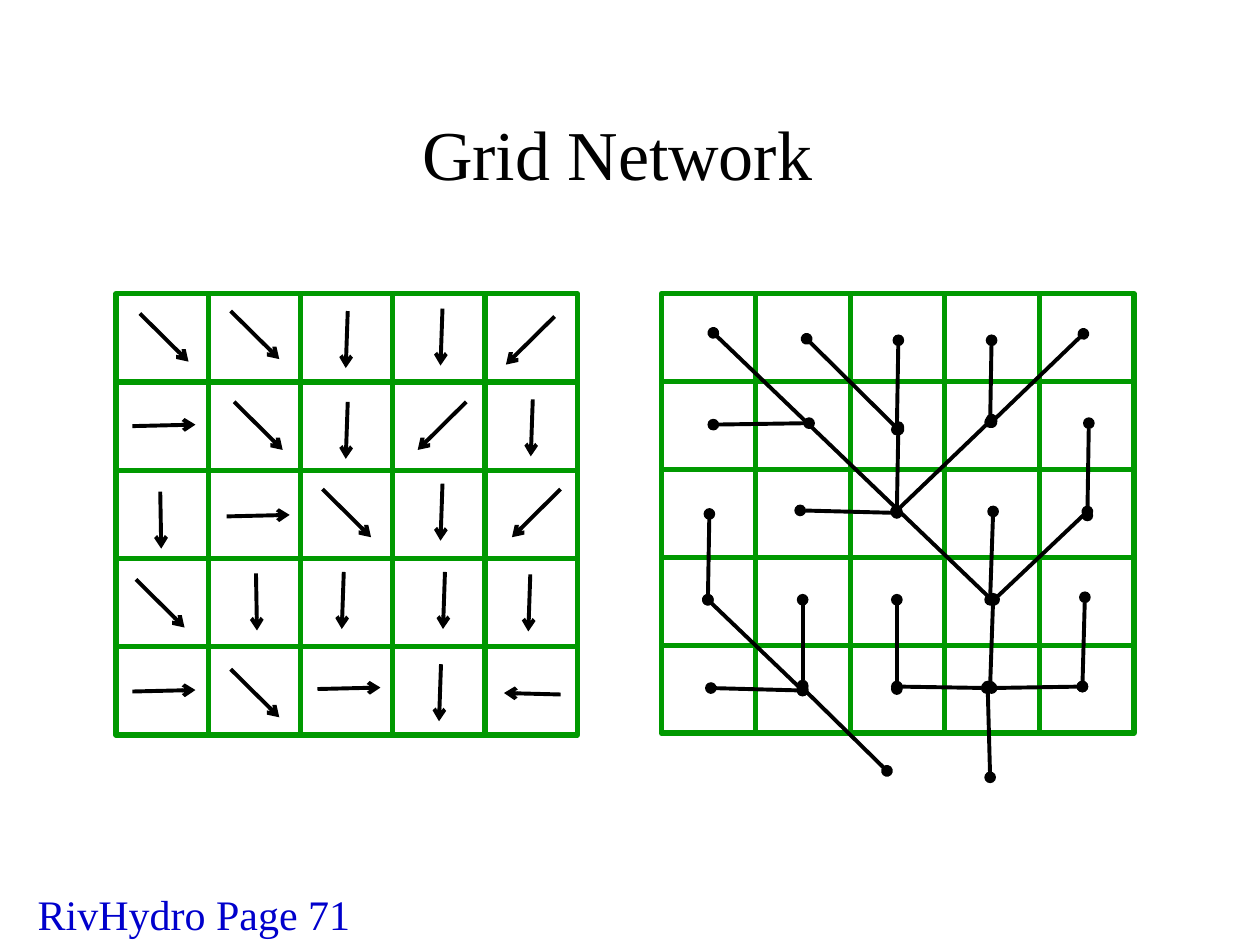
from pptx import Presentation
from pptx.dml.color import RGBColor
from pptx.enum.shapes import MSO_CONNECTOR, MSO_SHAPE
from pptx.enum.text import MSO_AUTO_SIZE
from pptx.oxml.ns import qn
from pptx.util import Cm, Pt
from lxml.etree import SubElement


def color(value):
    return RGBColor.from_string(value)


def add_line(group, start, end, ends):
    """Draw a black line; ends maps headEnd / tailEnd to an arrowhead type."""
    points = [Cm(value) for value in (*start, *end)]
    line = group.shapes.add_connector(MSO_CONNECTOR.STRAIGHT, *points)
    line.line.width = Pt(2.25)
    line.line.color.rgb = color("000000")
    for tag, kind in ends.items():
        SubElement(line.line._get_or_add_ln(), qn(f"a:{tag}"), type=kind)
    SubElement(line._element.spPr, qn("a:effectLst"))


deck = Presentation()
deck.slide_width, deck.slide_height = Cm(25.4), Cm(19.05)
page = deck.slides.add_slide(deck.slide_layouts[6])

# Two grids of 5 by 5 cells: left, top, width, height
count = 5
network_group = page.shapes.add_group_shape()
direction_group = page.shapes.add_group_shape()
grids = [
    (network_group, 13.33, 5.92, 9.53, 8.86),
    (direction_group, 2.34, 5.92, 9.3, 8.9),
]
for group, left, top, width, height in grids:
    cell_width, cell_height = width / count, height / count
    for row in range(count):
        for column in range(count):
            cell = group.shapes.add_shape(
                MSO_SHAPE.RECTANGLE,
                Cm(left + column * cell_width), Cm(top + row * cell_height),
                Cm(cell_width), Cm(cell_height))
            cell.shadow.inherit = False
            cell.fill.background()
            cell.line.color.rgb = color("009900")
            cell.line.width = Pt(3)

# Flow network: each link joins two points
links = [
    ((14.38, 6.71), (19.99, 12.09)),
    ((16.26, 6.83), (18.11, 8.66)),
    ((14.3, 10.36), (14.27, 12.09)),
    ((19.91, 13.84), (19.96, 15.67)),
    ((14.27, 12.09), (16.18, 13.92)),
    ((14.33, 13.87), (16.18, 13.92)),
    ((18.08, 13.84), (19.89, 13.87)),
    ((16.18, 13.87), (17.88, 15.54)),
    ((16.18, 12.09), (16.18, 13.82)),
    ((16.13, 10.29), (18.08, 10.34)),
    ((14.38, 8.56), (16.31, 8.53)),
    ((18.11, 6.86), (18.08, 8.66)),
    ((18.11, 8.61), (18.08, 10.31)),
    ((21.87, 12.04), (21.82, 13.84)),
    ((18.08, 12.09), (18.08, 13.89)),
    ((19.99, 6.86), (19.96, 8.51)),
    ((20.02, 10.31), (19.96, 12.09)),
    ((21.82, 13.84), (19.99, 13.87)),
    ((21.95, 8.53), (21.92, 10.39)),
    ((19.99, 8.46), (18.06, 10.31)),
    ((21.84, 6.73), (19.99, 8.51)),
    ((21.92, 10.31), (20.04, 12.09)),
    ((20.02, 12.07), (19.96, 13.84)),
]
for start, end in links:
    add_line(network_group, start, end, {"headEnd": "oval", "tailEnd": "oval"})

# Flow directions: the step of each direction and where its arrows start
arrows = {
    (0.98, 0.97): [(2.82, 6.32), (4.65, 6.27), (6.5, 9.86),
                   (2.74, 11.68), (4.72, 8.1), (4.65, 13.49)],
    (1.27, -0.03): [(2.67, 13.94), (6.4, 13.89), (4.57, 10.41), (2.67, 8.59)],
    (-0.04, 1.15): [(7.01, 6.27), (7.01, 8.1), (10.69, 11.58),
                    (8.97, 11.53), (6.93, 11.53), (8.92, 6.22),
                    (8.92, 9.75), (10.74, 8.05), (8.89, 13.39)],
    (0.02, 1.15): [(3.23, 9.91), (5.16, 11.56)],
    (-0.98, 0.97): [(9.4, 8.1), (11.18, 6.38), (11.3, 9.86)],
    (-1.14, -0.03): [(11.3, 14)],
}
for (step_x, step_y), starts in arrows.items():
    for x, y in starts:
        add_line(direction_group, (x, y), (x + step_x, y + step_y),
                 {"tailEnd": "arrow"})

# Title and page reference
labels = [
    ("Grid Network", (8.26, 2.11, 8.38, 1.96), 40, "000000"),
    ("RivHydro Page 71", (0.51, 17.78, 6.86, 1.27), 24, "0000CC"),
]
for text, place, size, ink in labels:
    box = page.shapes.add_textbox(*[Cm(value) for value in place])
    box.text_frame.word_wrap = False
    box.text_frame.auto_size = MSO_AUTO_SIZE.SHAPE_TO_FIT_TEXT
    para = box.text_frame.paragraphs[0]
    span = para.add_run()
    span.text = text
    span.font.color.rgb = color(ink)
    for name, value in {"name": "Times New Roman", "size": Pt(size)}.items():
        setattr(span.font, name, value)

deck.save("out.pptx")
